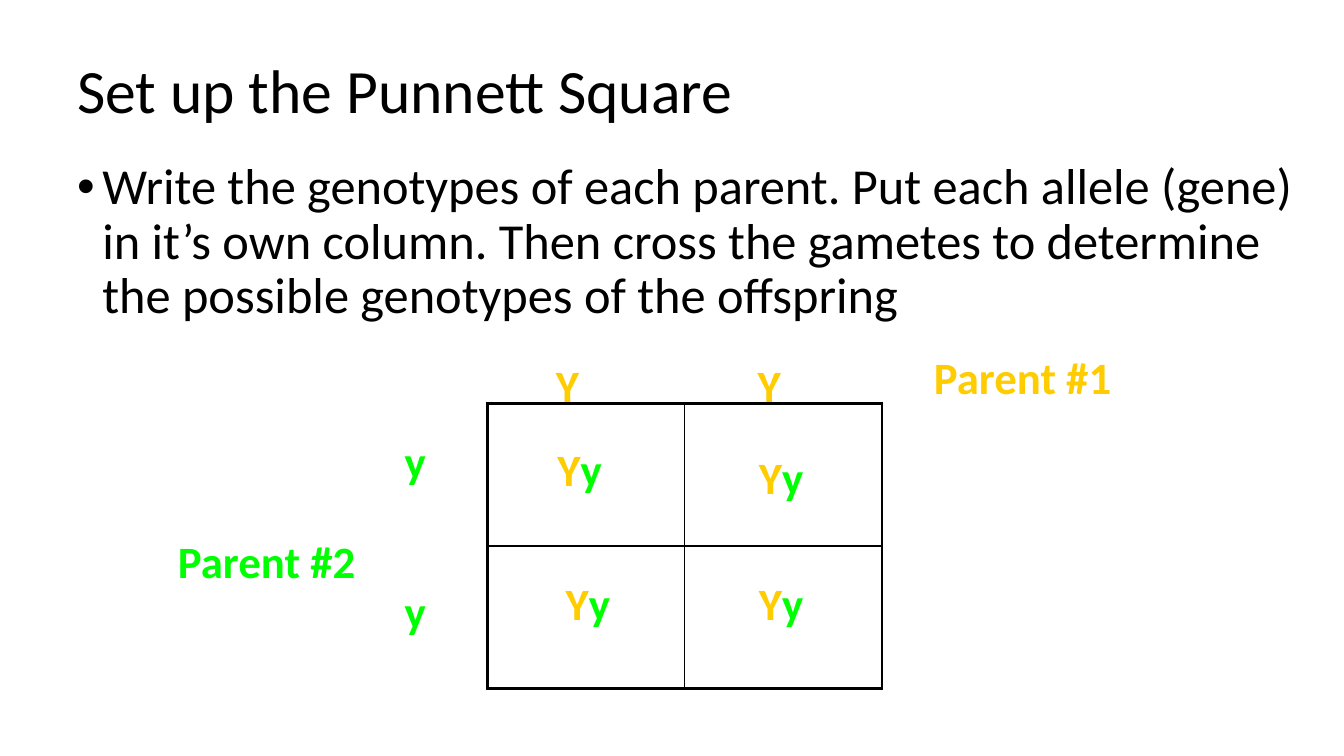
"""Build a slide that sets up a Punnett square with its allele labels."""
from dataclasses import dataclass

import pptx
import pptx.dml.color
import pptx.enum.text
import pptx.oxml
import pptx.oxml.ns
import pptx.util

EMU_PER_PX = 9525
FONT = "Calibri"
COLOURS = {"ink": "000000", "dominant": "FFCC00", "recessive": "00FF00"}
ALIGN = pptx.enum.text.PP_ALIGN
ANCHOR = pptx.enum.text.MSO_ANCHOR

TABLE_LEFT, TABLE_TOP = 464, 384
CELL_WIDTH, CELL_HEIGHT = 188, 136
SQUARE_SIZE = 2
OUTER_LINE, INNER_LINE = 2.25, 1
LABEL_HEIGHT = 60
TAB_STOP = 192


@dataclass(frozen=True)
class Run:
    text: str
    colour: str


@dataclass(frozen=True)
class Label:
    left: int
    top: int
    width: int
    height: int
    paragraphs: tuple[tuple[Run, ...], ...]
    size: int = 32
    bold: bool = True
    align: ALIGN = ALIGN.LEFT
    anchor: ANCHOR = ANCHOR.TOP
    line_spacing: float = 1.0
    gap: int = 0
    bullet: bool = False
    tab_stop: int = 0


OFFSPRING = ((Run("Y", "dominant"), Run("y", "recessive")),)
OFFSPRING_PLACES = ((480, 416), (672, 424), (488, 544), (672, 544))

LABELS = (
    Label(64, 29, 1152, 120, ((Run("Set up the Punnett Square", "ink"),),),
          size=44, bold=False, anchor=ANCHOR.MIDDLE, line_spacing=0.9),
    Label(64, 149, 1202, 176,
          ((Run("Write the genotypes of each parent. Put each allele (gene) in it’s own "
                "column. Then cross the gametes to determine the possible genotypes of "
                "the offspring", "ink"),),),
          size=36, bold=False, line_spacing=0.9, bullet=True),
    Label(520, 336, 264, LABEL_HEIGHT, ((Run("Y\tY", "dominant"),),), tab_stop=TAB_STOP),
    Label(376, 408, 72, 214, ((Run("y", "recessive"),),) * 2, gap=69),
    Label(880, 328, 240, LABEL_HEIGHT, ((Run("Parent #1", "dominant"),),)),
    Label(160, 504, 224, LABEL_HEIGHT, ((Run("Parent #2", "recessive"),),)),
    *(Label(left, top, 144, LABEL_HEIGHT, OFFSPRING, align=ALIGN.CENTER)
      for left, top in OFFSPRING_PLACES),
)


def px(length: int) -> pptx.util.Emu:
    """Turn pixels into EMU."""
    return pptx.util.Emu(length * EMU_PER_PX)


def add_xml(parent, markup: str) -> None:
    """Append an element written with the drawing namespace prefix."""
    tag, rest = markup.split(" ", 1)
    parent.append(pptx.oxml.parse_xml(f"{tag} {pptx.oxml.ns.nsdecls('a')} {rest}"))


def add_label(slide: pptx.slide.Slide, label: Label) -> None:
    """Draw one text label run by run."""
    shape = slide.shapes.add_textbox(
        px(label.left), px(label.top), px(label.width), px(label.height))
    frame = shape.text_frame
    frame.word_wrap = True
    frame.vertical_anchor = label.anchor
    for index, runs in enumerate(label.paragraphs):
        paragraph = frame.add_paragraph() if index else frame.paragraphs[0]
        paragraph.alignment = label.align
        paragraph.line_spacing = label.line_spacing
        if index:
            paragraph.space_before = pptx.util.Pt(label.gap)
        properties = paragraph._p.get_or_add_pPr()
        if label.bullet:
            properties.set("marL", str(px(24)))
            properties.set("indent", str(px(-24)))
            add_xml(properties, '<a:buFont typeface="Arial"/>')
            add_xml(properties, '<a:buChar char="•"/>')
        if label.tab_stop:
            add_xml(properties, f'<a:tabLst ><a:tab pos="{px(label.tab_stop)}" algn="l"/></a:tabLst>')
        for part in runs:
            run = paragraph.add_run()
            run.text = part.text
            run.font.name = FONT
            run.font.size = pptx.util.Pt(label.size)
            run.font.bold = label.bold
            run.font.color.rgb = pptx.dml.color.RGBColor.from_string(COLOURS[part.colour])


def add_square(slide: pptx.slide.Slide) -> None:
    """Draw the empty grid with a heavy outline."""
    table = slide.shapes.add_table(
        SQUARE_SIZE, SQUARE_SIZE, px(TABLE_LEFT), px(TABLE_TOP),
        px(SQUARE_SIZE * CELL_WIDTH), px(SQUARE_SIZE * CELL_HEIGHT)).table
    table.first_row = False
    table.horz_banding = False
    last = SQUARE_SIZE - 1
    for row in range(SQUARE_SIZE):
        for column in range(SQUARE_SIZE):
            cell = table.cell(row, column)
            properties = cell._tc.get_or_add_tcPr()
            outer_sides = {"L": column == 0, "R": column == last,
                           "T": row == 0, "B": row == last}
            for side, outer in outer_sides.items():
                width = pptx.util.Pt(OUTER_LINE if outer else INNER_LINE)
                add_xml(properties,
                        f'<a:ln{side} w="{width}"><a:solidFill>'
                        f'<a:srgbClr val="{COLOURS["ink"]}"/></a:solidFill></a:ln{side}>')
            cell.fill.background()


def main() -> None:
    """Assemble and save the slide."""
    presentation = pptx.Presentation()
    presentation.slide_width = px(1280)
    presentation.slide_height = px(720)
    slide = presentation.slides.add_slide(presentation.slide_layouts[6])
    add_square(slide)
    for label in LABELS:
        add_label(slide, label)
    presentation.save("out.pptx")


if __name__ == "__main__":
    main()
